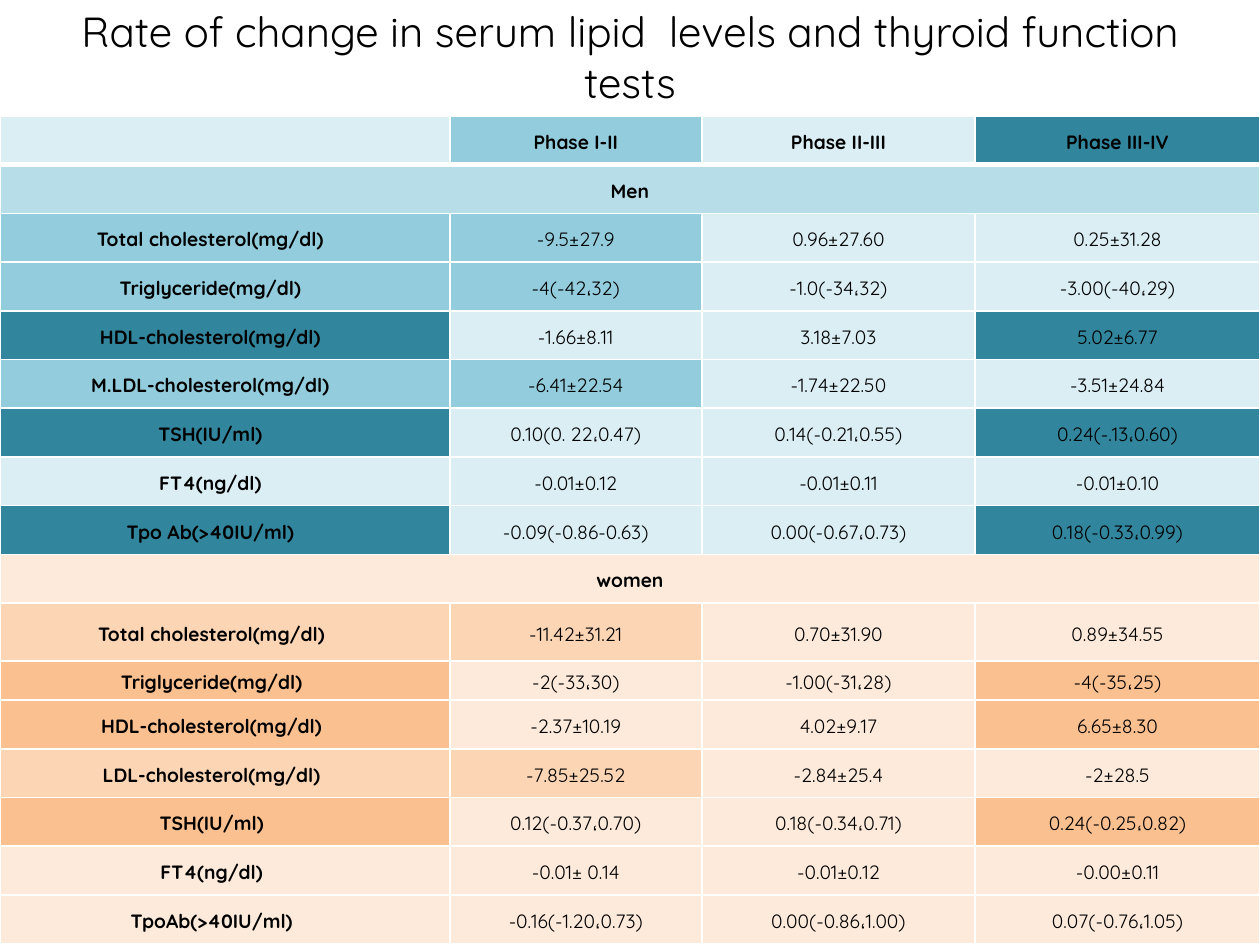
import pptx
import pptx.util
import pptx.dml.color
import pptx.enum.text
import pptx.oxml
import pptx.oxml.ns

Inches, Pt = pptx.util.Inches, pptx.util.Pt
RGBColor = pptx.dml.color.RGBColor
FONT = "Quicksand"
BLACK = RGBColor(0, 0, 0)
PALE = RGBColor(0xDB, 0xEE, 0xF4)
SKY = RGBColor(0xB7, 0xDE, 0xE8)
AQUA = RGBColor(0x93, 0xCD, 0xDD)
TEAL = RGBColor(0x31, 0x85, 0x9C)
CREAM = RGBColor(0xFD, 0xEA, 0xDA)
PEACH = RGBColor(0xFC, 0xD5, 0xB5)
AMBER = RGBColor(0xFA, 0xC0, 0x90)

# Content: each row has its trend, its label and three phase values
TITLE = "Rate of change in serum lipid  levels and thyroid function tests"
HEADS = ["", "Phase I-II", "Phase II-III", "Phase III-IV"]
MEN = [
    ("early", "Total cholesterol(mg/dl)", "-9.5±27.9", "0.96±27.60", "0.25±31.28"),
    ("early", "Triglyceride(mg/dl)", "-4(-42،32)", "-1.0(-34،32)", "-3.00(-40،29)"),
    ("late", "HDL-cholesterol(mg/dl)", "-1.66±8.11", "3.18±7.03", "5.02±6.77"),
    ("early", "M.LDL-cholesterol(mg/dl)", "-6.41±22.54", "-1.74±22.50", "-3.51±24.84"),
    ("late", "TSH(IU/ml)", "0.10(0. 22،0.47)", "0.14(-0.21،0.55)", "0.24(-.13،0.60)"),
    ("flat", "FT4(ng/dl)", "-0.01±0.12", "-0.01±0.11", "-0.01±0.10"),
    ("late", "Tpo Ab(>40IU/ml)", "-0.09(-0.86-0.63)", "0.00(-0.67،0.73)", "0.18(-0.33،0.99)"),
]
WOMEN = [
    ("early", "Total cholesterol(mg/dl)", "-11.42±31.21", "0.70±31.90", "0.89±34.55"),
    ("late", "Triglyceride(mg/dl)", "-2(-33،30)", "-1.00(-31،28)", "-4(-35،25)"),
    ("late", "HDL-cholesterol(mg/dl)", "-2.37±10.19", "4.02±9.17", "6.65±8.30"),
    ("early", "LDL-cholesterol(mg/dl)", "-7.85±25.52", "-2.84±25.4", "-2±28.5"),
    ("late", "TSH(IU/ml)", "0.12(-0.37،0.70)", "0.18(-0.34،0.71)", "0.24(-0.25،0.82)"),
    ("flat", "FT4(ng/dl)", "-0.01± 0.14", "-0.01±0.12", "-0.00±0.11"),
    ("flat", "TpoAb(>40IU/ml)", "-0.16(-1.20،0.73)", "0.00(-0.86،1.00)", "0.07(-0.76،1.05)"),
]
# Group name, band fill, base fill, trend fills, label indent, rows
GROUPS = [
    ("Men", SKY, PALE, {"early": AQUA, "late": TEAL}, 0.23, MEN),
    ("women", CREAM, CREAM, {"early": PEACH, "late": AMBER}, 0.21, WOMEN),
]
MARKED = {"early": (0, 1), "late": (0, 3), "flat": ()}
COLS = [3.57, 2, 2.17, 2.26]
ODD = {10: 0.46, 11: 0.31}
COUNT = 1 + sum(1 + len(group[-1]) for group in GROUPS)
HIGH = 6.57
EVEN = (HIGH - sum(ODD.values())) / (COUNT - len(ODD))


def write(para, text, size, bold=False):
    para.alignment = pptx.enum.text.PP_ALIGN.CENTER
    run = para.add_run()
    run.text = text
    run.font.name, run.font.size, run.font.bold = FONT, Pt(size), bold
    run.font.color.rgb = BLACK


def edge(cell, row):
    """White borders, heavier between the heads and the body."""
    wide = {"T": 3 if row == 1 else 1, "B": 3 if row == 0 else 1}
    for pos, side in enumerate("LRTB"):
        line = pptx.oxml.parse_xml(
            f'<a:ln{side} {pptx.oxml.ns.nsdecls("a")} w="{Pt(wide.get(side, 1))}">'
            '<a:solidFill><a:srgbClr val="FFFFFF"/></a:solidFill>'
            f'</a:ln{side}>')
        cell._tc.get_or_add_tcPr().insert(pos, line)


def put(row, col, text, fill, bold=False, rtl=False, indent=0):
    cell = table.cell(row, col)
    cell.fill.solid()
    cell.fill.fore_color.rgb = fill
    edge(cell, row)
    cell.vertical_anchor = pptx.enum.text.MSO_ANCHOR.MIDDLE
    cell.margin_left = cell.margin_right = Inches(0.07)
    cell.margin_top = cell.margin_bottom = 0
    if not text:
        return
    para = cell.text_frame.paragraphs[0]
    para.line_spacing, para.space_after = 1.15, Pt(10)
    write(para, text, 11, bold)
    if rtl:
        props = para._p.get_or_add_pPr()
        props.set("rtl", "1")
        props.set("marL", "0")
        props.set("indent", str(Inches(indent)))


deck = pptx.Presentation()
deck.slide_width, deck.slide_height = Inches(10), Inches(7.5)
slide = deck.slides.add_slide(deck.slide_layouts[6])

# Title
box = slide.shapes.add_textbox(Inches(0.5), Inches(-0.66), Inches(9), Inches(2.21))
box.text_frame.word_wrap = True
box.text_frame.vertical_anchor = pptx.enum.text.MSO_ANCHOR.MIDDLE
write(box.text_frame.paragraphs[0], TITLE, 24)

# Table grid
table = slide.shapes.add_table(
    COUNT, len(COLS), 0, Inches(0.92), Inches(10), Inches(HIGH)).table
table.horz_banding = False
for col, width in enumerate(COLS):
    table.columns[col].width = Inches(width)
for row in range(COUNT):
    table.rows[row].height = Inches(ODD.get(row, EVEN))

# Heads
for col, (text, fill) in enumerate(zip(HEADS, (PALE, AQUA, PALE, TEAL))):
    put(0, col, text, fill, bold=True, rtl=True)

# Groups: a merged band, then the rows
row = 1
for name, band, base, tones, indent, lines in GROUPS:
    table.cell(row, 0).merge(table.cell(row, len(COLS) - 1))
    for col in range(len(COLS)):
        put(row, col, "" if col else name, band, bold=True)
    for row, (trend, *texts) in enumerate(lines, row + 1):
        for col, text in enumerate(texts):
            fill = tones[trend] if col in MARKED[trend] else base
            label = col == 0
            put(row, col, text, fill, label, label, indent)
    row += 1

deck.save("out.pptx")
